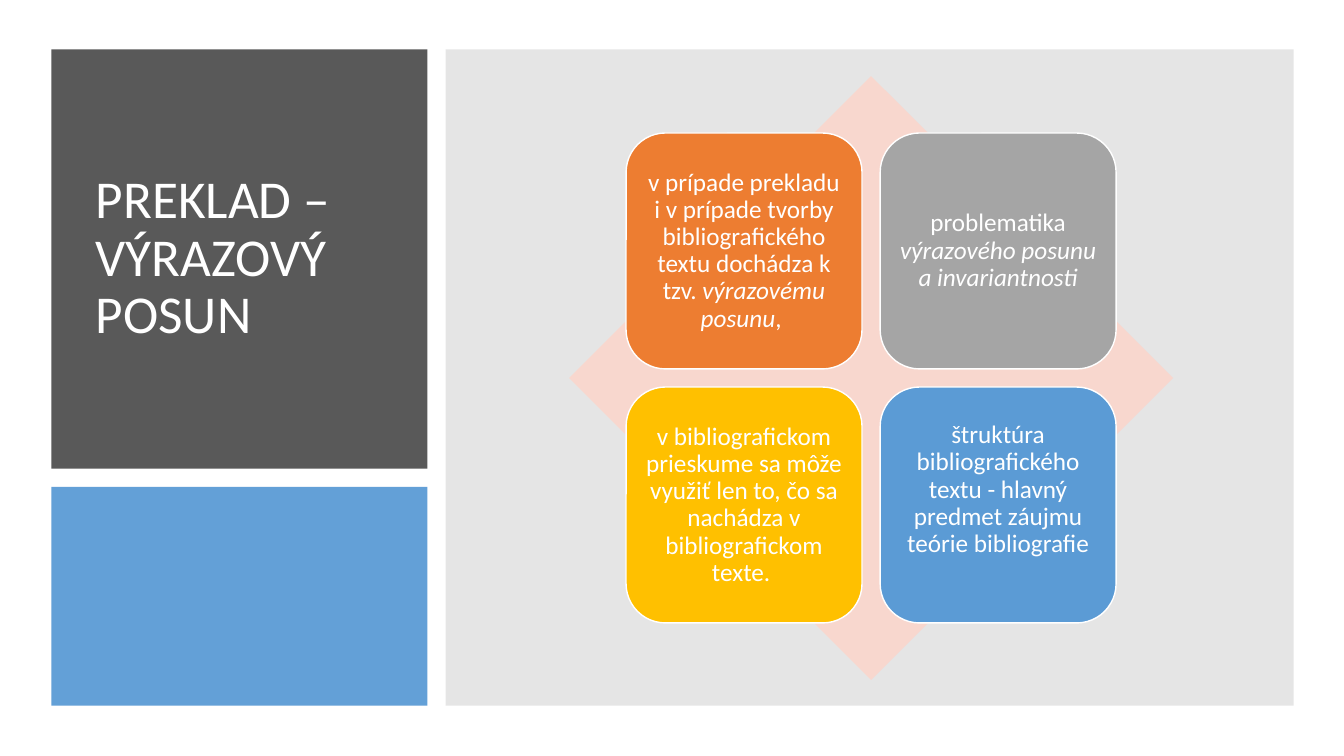
from lxml import etree
from pptx import Presentation
from pptx.dml.color import RGBColor
from pptx.enum.shapes import MSO_SHAPE
from pptx.enum.text import MSO_ANCHOR, MSO_AUTO_SIZE, PP_ALIGN
from pptx.oxml.ns import qn
from pptx.util import Inches, Pt

RECTANGLE, DIAMOND = MSO_SHAPE.RECTANGLE, MSO_SHAPE.DIAMOND
ROUNDED = MSO_SHAPE.ROUNDED_RECTANGLE
MIDDLE, LEFT, CENTER = MSO_ANCHOR.MIDDLE, PP_ALIGN.LEFT, PP_ALIGN.CENTER
NO_AUTOFIT = MSO_AUTO_SIZE.NONE

WHITE = RGBColor(0xFF, 0xFF, 0xFF)
DARK_GRAY = RGBColor(0x59, 0x59, 0x59)
MID_GRAY = RGBColor(0x80, 0x80, 0x80)
PEACH = RGBColor(0xF8, 0xD7, 0xCE)
ORANGE = RGBColor(0xED, 0x7D, 0x31)
SILVER = RGBColor(0xA5, 0xA5, 0xA5)
GOLD = RGBColor(0xFF, 0xC0, 0x00)
BLUE = RGBColor(0x5B, 0x9B, 0xD5)

FONT = "Calibri"
SLIDE_WIDTH, SLIDE_HEIGHT = 13.33, 7.5

# Panel grid, in inches
LEFT_COLUMN, RIGHT_COLUMN = 0.51, 4.42
LEFT_WIDTH, RIGHT_WIDTH = 3.73, 8.41
TOP_ROW, BOTTOM_ROW = 0.49, 4.83
TOP_HEIGHT, BOTTOM_HEIGHT = 4.16, 2.17
FULL_HEIGHT = BOTTOM_ROW + BOTTOM_HEIGHT - TOP_ROW

# Matrix of four cards centred on the diamond
CENTER_X, CENTER_Y = 8.64, 3.75
DIAMOND_SIZE, CARD_SIZE, CARD_GAP = 5.99, 2.34, 0.18

# Each card: fill and (text, italic) runs
CARDS = [
    (ORANGE, [("v prípade prekladu i v prípade tvorby bibliografického textu "
               "dochádza k tzv. ", False),
              ("výrazovému posunu", True), (", ", False)]),
    (SILVER, [("problematika ", False),
              ("výrazového posunu a invariantnosti", True)]),
    (GOLD, [("v bibliografickom prieskume sa môže využiť len to, čo sa "
             "nachádza v bibliografickom texte. ", False)]),
    (BLUE, [("štruktúra bibliografického textu - hlavný predmet záujmu "
             "teórie bibliografie", False)]),
]


def place(shape, left, top, width, height):
    shape.left, shape.top = Inches(left), Inches(top)
    shape.width, shape.height = Inches(width), Inches(height)


def add_block(slide, kind, box, color, opacity=100):
    """Add a borderless filled shape; opacity is a percentage."""
    shape = slide.shapes.add_shape(kind, *(Inches(length) for length in box))
    shape.shadow.inherit = False
    shape.fill.solid()
    shape.fill.fore_color.rgb = color
    shape.line.fill.background()
    if opacity < 100:
        color_element = shape.fill._xPr.find(qn("a:solidFill"))[0]
        alpha = etree.SubElement(color_element, qn("a:alpha"))
        alpha.set("val", str(opacity * 1000))
    return shape


def write_runs(shape, runs, size, alignment):
    frame = shape.text_frame
    frame.word_wrap = True
    frame.auto_size = NO_AUTOFIT
    frame.vertical_anchor = MIDDLE
    paragraph = frame.paragraphs[0]
    paragraph.alignment = alignment
    paragraph.line_spacing = 0.9
    for text, italic in runs:
        run = paragraph.add_run()
        run.text = text
        run.font.name = FONT
        run.font.size = Pt(size)
        run.font.italic = italic
        run.font.color.rgb = WHITE
    return paragraph


def add_title(slide):
    title = slide.shapes.title
    place(title, 0.85, 0.8, 3.11, 3.54)
    write_runs(title, [("PREKLAD – VÝRAZOVÝ POSUN", False)], 38, LEFT)
    slide.shapes._spTree.append(title._element)  # in front of the dark panel


def add_card(slide, index, color, runs):
    row, column = divmod(index, 2)
    pitch = CARD_SIZE + CARD_GAP
    left = CENTER_X + (column - 0.5) * pitch - CARD_SIZE / 2
    top = CENTER_Y + (row - 0.5) * pitch - CARD_SIZE / 2
    card = add_block(slide, ROUNDED, (left, top, CARD_SIZE, CARD_SIZE), color)
    card.line.color.rgb = WHITE
    card.line.width = Pt(1)
    frame = card.text_frame
    frame.margin_left = frame.margin_right = Inches(0.07)
    frame.margin_top = frame.margin_bottom = Inches(0.07)
    return write_runs(card, runs, 18, CENTER)


def add_matrix(slide):
    corner = (CENTER_X - DIAMOND_SIZE / 2, CENTER_Y - DIAMOND_SIZE / 2)
    add_block(slide, DIAMOND, (*corner, DIAMOND_SIZE, DIAMOND_SIZE), PEACH)
    for index, (color, runs) in enumerate(CARDS):
        paragraph = add_card(slide, index, color, runs)
    paragraph.add_line_break()  # the last card's text ends with a break
    paragraph.font.size = Pt(18)


def main():
    presentation = Presentation()
    presentation.slide_width = Inches(SLIDE_WIDTH)
    presentation.slide_height = Inches(SLIDE_HEIGHT)
    slide = presentation.slides.add_slide(presentation.slide_layouts[5])

    add_block(slide, RECTANGLE,
              (LEFT_COLUMN, TOP_ROW, LEFT_WIDTH, TOP_HEIGHT), DARK_GRAY)
    add_title(slide)
    add_block(slide, RECTANGLE,
              (LEFT_COLUMN, BOTTOM_ROW, LEFT_WIDTH, BOTTOM_HEIGHT), BLUE, 95)
    add_block(slide, RECTANGLE,
              (RIGHT_COLUMN, TOP_ROW, RIGHT_WIDTH, FULL_HEIGHT), MID_GRAY, 20)
    add_matrix(slide)
    presentation.save("out.pptx")


if __name__ == "__main__":
    main()
